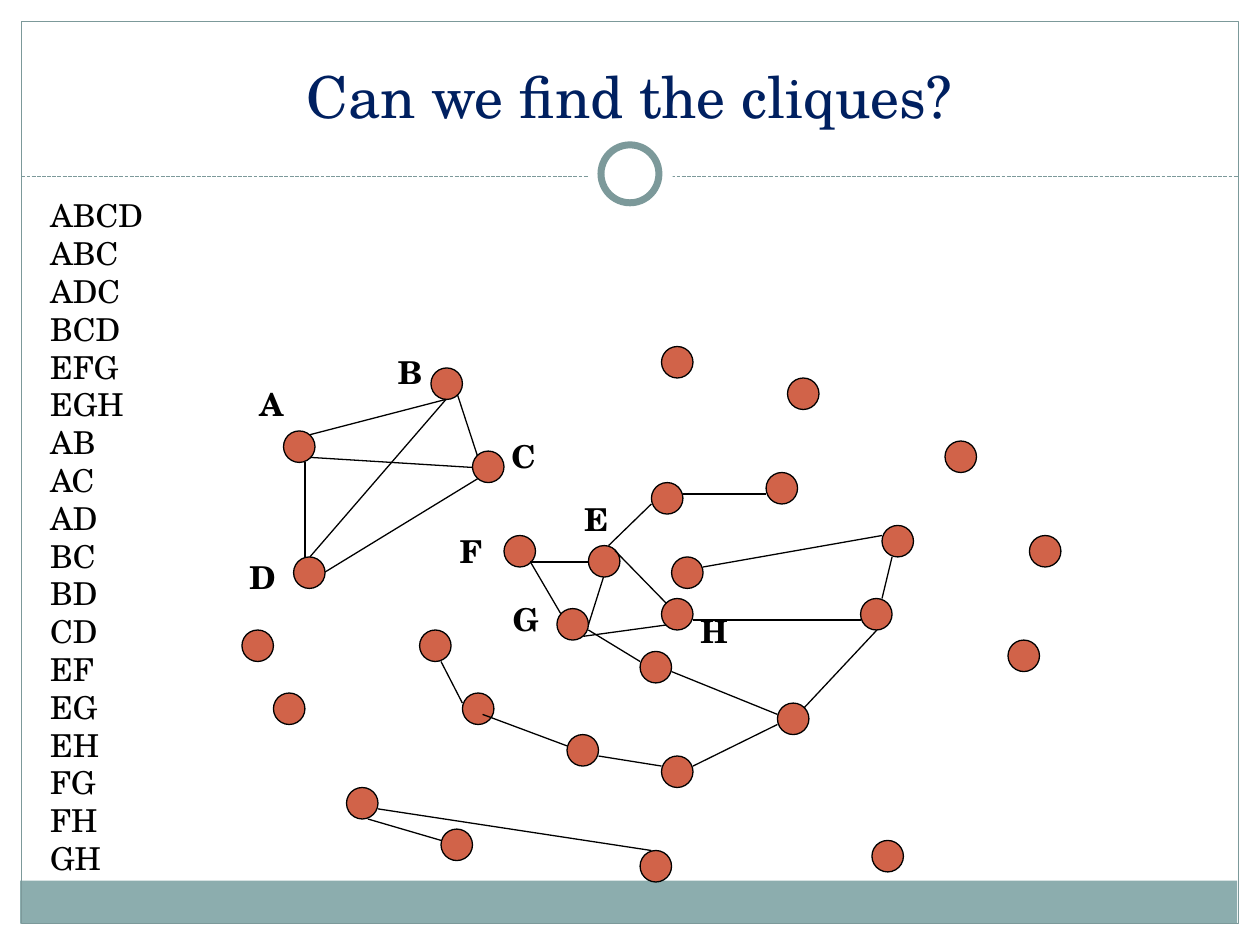
from lxml import etree
from pptx import Presentation
from pptx.dml.color import RGBColor
from pptx.enum.dml import MSO_LINE
from pptx.enum.shapes import MSO_CONNECTOR, MSO_SHAPE
from pptx.enum.text import MSO_ANCHOR, MSO_AUTO_SIZE, PP_ALIGN
from pptx.oxml.ns import qn
from pptx.util import Inches, Pt

RECT, OVAL = MSO_SHAPE.RECTANGLE, MSO_SHAPE.OVAL
STRAIGHT = MSO_CONNECTOR.STRAIGHT
DASH = MSO_LINE.SQUARE_DOT
BOTTOM, CENTER, LEFT = MSO_ANCHOR.BOTTOM, PP_ALIGN.CENTER, PP_ALIGN.LEFT
NO_FIT = MSO_AUTO_SIZE.NONE

FONT = "TeX Gyre Schola"
COLORS = {"band": "8CADAE", "frame": "7C999A", "white": "FFFFFF",
          "title": "002060", "node": "D16349", "ink": "000000"}
TITLE = "Can we find the cliques?"
CLIQUES = ["ABCD", "ABC", "ADC", "BCD", "EFG", "EGH", "AB", "AC", "AD",
           "BC", "BD", "CD", "EF", "EG", "EH", "FG", "FH", "GH"]
NODE_SIZE = 0.25
NODES = [
    (3.42, 2.92), (4, 4.25), (7.5, 3.5), (3.75, 3.58), (5.25, 4.75),
    (5.08, 5.17), (5.25, 2.75), (6.25, 3), (3.33, 5), (4.67, 4.33),
    (5.17, 3.83), (6.17, 5.58), (2.25, 3.42), (2.33, 4.42), (5.33, 4.42),
    (6.08, 3.75), (5.25, 6), (1.92, 5), (8.17, 4.25), (4.42, 4.83),
    (6.83, 4.75), (2.17, 5.5), (5.08, 6.75), (6.92, 6.67), (3.67, 5.5),
    (4.5, 5.83), (3.5, 6.58), (2.75, 6.25), (8, 5.08), (7, 4.17),
]
EDGES = [
    (3.83, 5.67, 4.5, 5.92), (4.75, 6, 5.25, 6.08), (5.5, 6.08, 6.17, 5.75),
    (7, 4.75, 7.08, 4.42), (3.5, 5.25, 3.67, 5.58), (4.83, 4.33, 5.17, 4),
    (5.42, 3.92, 6.08, 3.92), (5.58, 4.5, 7, 4.25), (5.5, 4.92, 6.83, 4.92),
    (5.33, 5.33, 6.17, 5.67), (4.67, 5, 5.08, 5.25), (2.42, 3.67, 2.42, 4.42),
    (2.92, 6.5, 3.5, 6.67), (3, 6.42, 5.17, 6.75), (4.45, 4.87, 4.21, 4.46),
    (4.21, 4.46, 4.67, 4.46), (4.88, 4.37, 5.29, 4.79), (6.38, 5.62, 6.96, 5),
    (2.46, 3.45, 3.54, 3.17), (3.63, 3.13, 3.79, 3.62), (2.58, 4.54, 3.79, 3.8),
    (3.54, 3.17, 2.46, 4.42), (2.46, 3.63, 3.75, 3.71), (4.67, 4.96, 4.79, 4.58),
    (4.63, 5.05, 5.29, 4.96),
]
LABELS = {"A": (1.96, 3.01), "B": (3.06, 2.75), "C": (3.96, 3.42),
          "D": (1.88, 4.38), "E": (4.54, 3.92), "F": (3.55, 4.17),
          "G": (3.97, 4.71), "H": (5.46, 4.81)}


def rgb(name):
    return RGBColor.from_string(COLORS[name])


def add_shape(s, kind, box, fill=None, line=None, width=0.75):
    sp = s.shapes.add_shape(kind, *map(Inches, box))
    sp.shadow.inherit = False
    if fill:
        sp.fill.solid()
        sp.fill.fore_color.rgb = rgb(fill)
    else:
        sp.fill.background()
    if line:
        sp.line.color.rgb = rgb(line)
        sp.line.width = Pt(width)
    else:
        sp.line.fill.background()


def add_line(s, ends, color):
    ln = s.shapes.add_connector(STRAIGHT, *map(Inches, ends))
    ln.line.color.rgb = rgb(color)
    ln.line.width = Pt(0.75)
    etree.SubElement(ln._element.spPr, qn("a:effectLst"))
    return ln


def write(tf, lines, size, color, bold=False, align=LEFT):
    tf.word_wrap = True
    tf.text = "\n".join(lines)
    for p in tf.paragraphs:
        p.alignment = align
        for r in p.runs:
            r.font.name = FONT
            r.font.size = Pt(size)
            r.font.bold = bold
            r.font.color.rgb = rgb(color)


def add_text(s, box, lines, bold=False):
    sp = s.shapes.add_textbox(*map(Inches, box))
    write(sp.text_frame, lines, 18, "ink", bold)


def add_frame(s):
    add_shape(s, RECT, (0.16, 6.99, 9.66, 0.34), fill="band")
    add_shape(s, RECT, (0.17, 0.17, 9.66, 7.16), line="frame")
    add_line(s, (0.17, 1.4, 9.83, 1.4), "frame").line.dash_style = DASH
    add_shape(s, OVAL, (4.67, 1.05, 0.67, 0.67), fill="white")
    add_shape(s, OVAL, (4.77, 1.15, 0.46, 0.46), "white", "frame", 4)


def add_title(s):
    sp = s.shapes.title
    sp.left, sp.top, sp.width, sp.height = map(Inches, (0.33, 0.25, 9.33, 0.83))
    tf = sp.text_frame
    tf.auto_size = NO_FIT
    tf.vertical_anchor = BOTTOM
    write(tf, [TITLE], 33, "title", align=CENTER)


def main():
    prs = Presentation()
    prs.slide_width, prs.slide_height = Inches(10), Inches(7.5)
    s = prs.slides.add_slide(prs.slide_layouts[5])
    add_frame(s)
    add_title(s)
    for x, y in NODES:
        add_shape(s, OVAL, (x, y, NODE_SIZE, NODE_SIZE), "node", "ink")
    for ends in EDGES:
        add_line(s, ends, "ink")
    for name, (x, y) in LABELS.items():
        add_text(s, (x, y, 0.42, 0.4), [name], bold=True)
    add_text(s, (0.3, 1.51, 2.17, 5.55), CLIQUES)
    prs.save("out.pptx")


if __name__ == "__main__":
    main()
